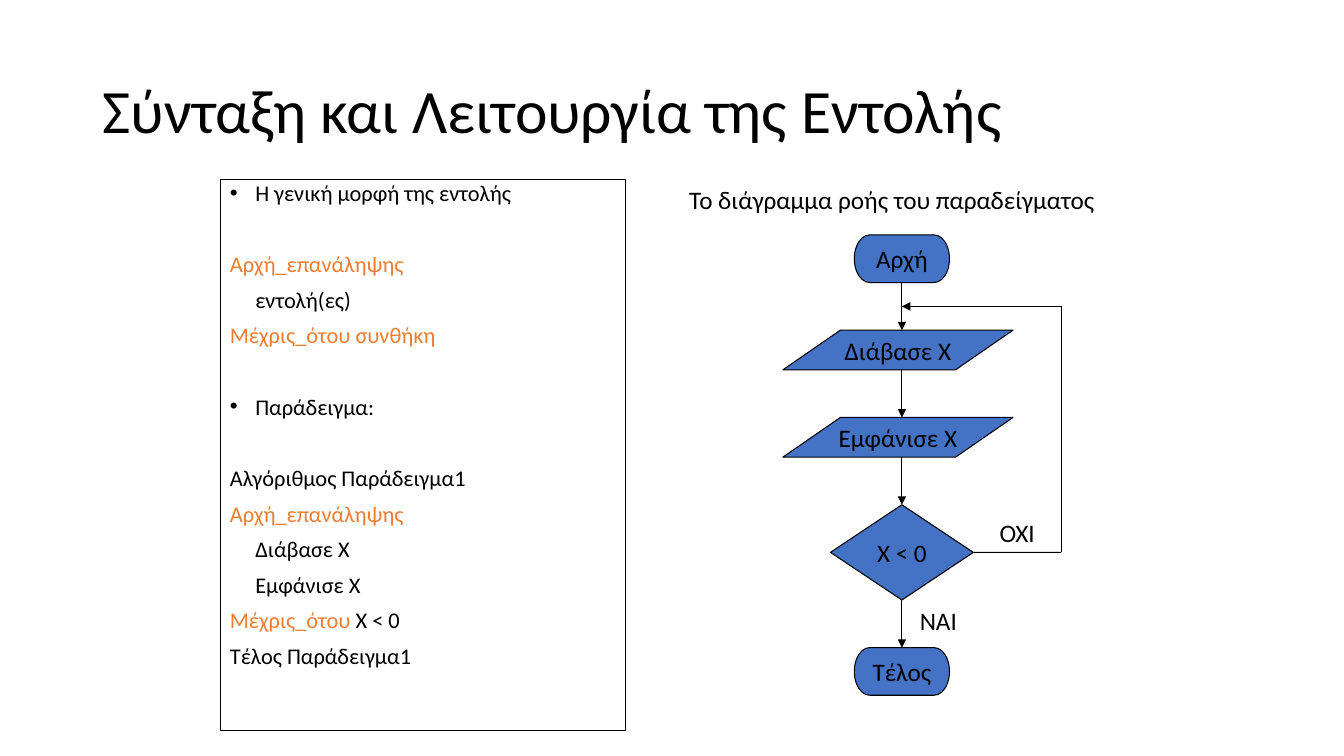
from lxml import etree
from pptx import Presentation
from pptx.dml.color import RGBColor
from pptx.enum import shapes, text
from pptx.oxml import ns
from pptx.util import Cm, Pt

BLACK = RGBColor(0x00, 0x00, 0x00)
BLUE = RGBColor(0x44, 0x72, 0xC4)
ORANGE = RGBColor(0xED, 0x7D, 0x31)
WHITE = RGBColor(0xFF, 0xFF, 0xFF)
FONT = "Calibri"

TITLE = "Σύνταξη και Λειτουργία της Εντολής"
CAPTION = "Το διάγραμμα ροής του παραδείγματος"

# kind, space before in points, (text, colour) parts
SYNTAX = [
    ("bullet", 0, [("Η γενική μορφή της εντολής", BLACK)]),
    ("code", 35.6, [("Αρχή_επανάληψης", ORANGE)]),
    ("inner", 10, [("εντολή(ες)", BLACK)]),
    ("code", 10, [("Μέχρις_ότου συνθήκη", ORANGE)]),
    ("bullet", 35.6, [("Παράδειγμα:", BLACK)]),
    ("code", 35.6, [("Αλγόριθμος Παράδειγμα1", BLACK)]),
    ("code", 10, [("Αρχή_επανάληψης", ORANGE)]),
    ("inner", 10, [("Διάβασε Χ", BLACK)]),
    ("inner", 10, [("Εμφάνισε Χ", BLACK)]),
    ("code", 10, [("Μέχρις_ότου ", ORANGE), ("Χ < 0", BLACK)]),
    ("code", 10, [("Τέλος Παράδειγμα1", BLACK)]),
]

STEPS = [
    ("Αρχή", "terminal"),
    ("Διάβασε Χ", "data"),
    ("Εμφάνισε Χ", "data"),
    ("Χ < 0", "decision"),
    ("Τέλος", "terminal"),
]
# preset, width, height, shift from the axis
STEP_FORMS = {
    "terminal": (shapes.MSO_SHAPE.FLOWCHART_TERMINATOR, 2.4, 1.2, 0),
    "data": (shapes.MSO_SHAPE.PARALLELOGRAM, 5.8, 1.0, -0.1),
    "decision": (shapes.MSO_SHAPE.FLOWCHART_DECISION, 3.6, 2.4, 0),
}
AXIS, FLOW_TOP, GAP, LOOP_X = 22.73, 5.92, 1.2, 26.74
LABELS = [
    (CAPTION, 17.12, 4.52, 11.6),
    ("ΝΑΙ", 22.93, 15.12, 2),
    ("OXI", 24.94, 12.92, 2),
]


def style(paragraph, size, colour=BLACK):
    for run in paragraph.runs:
        run.font.name = FONT
        run.font.size = Pt(size)
        run.font.color.rgb = colour


def place(item, left, top, width, height):
    item.left, item.top, item.width, item.height = map(Cm, (left, top, width, height))


def add_line(slide, start, end, arrow=True):
    line = slide.shapes.add_connector(
        shapes.MSO_CONNECTOR.STRAIGHT, *map(Cm, start + end))
    line.line.color.rgb = BLACK
    line.line.width = Pt(0.75)
    if arrow:
        etree.SubElement(line.line._get_or_add_ln(), ns.qn("a:tailEnd"), type="triangle")
    etree.SubElement(line._element.spPr, ns.qn("a:effectLst"))
    return line


def add_syntax(body):
    place(body, 5.54, 4.52, 10.21, 13.89)
    body.line.color.rgb = BLACK
    body.line.width = Pt(0.25)
    frame = body.text_frame
    frame.auto_size = text.MSO_AUTO_SIZE.NONE
    for number, (kind, before, parts) in enumerate(SYNTAX):
        paragraph = frame.add_paragraph() if number else frame.paragraphs[0]
        props = paragraph._p.get_or_add_pPr()
        props.set("marL", str(Cm(0.64)))
        props.set("indent", str(0 if kind == "inner" else -Cm(0.64)))
        if kind == "bullet":
            etree.SubElement(props, ns.qn("a:buFont"), typeface="Arial")
            etree.SubElement(props, ns.qn("a:buChar"), char="•")
        else:
            etree.SubElement(props, ns.qn("a:buNone"))
        paragraph.line_spacing = 0.8
        paragraph.space_before = Pt(before)
        for words, colour in parts:
            run = paragraph.add_run()
            run.text = words
            run.font.name = FONT
            run.font.size = Pt(16)
            run.font.color.rgb = colour


def add_step(slide, words, kind, top):
    preset, width, height, shift = STEP_FORMS[kind]
    step = slide.shapes.add_shape(
        preset, *map(Cm, (AXIS + shift - width / 2, top, width, height)))
    if kind == "data":
        step.adjustments[0] = 1.448
    step.shadow.inherit = False
    step.fill.solid()
    step.fill.fore_color.rgb = BLUE
    step.line.color.rgb = BLACK
    step.line.width = Pt(0.75)
    frame = step.text_frame
    frame.word_wrap = False
    frame.vertical_anchor = text.MSO_ANCHOR.MIDDLE
    frame.text = words
    frame.paragraphs[0].alignment = text.PP_ALIGN.CENTER
    style(frame.paragraphs[0], 18)
    return step


def add_flow(slide):
    top, previous, previous_kind = FLOW_TOP, None, None
    for words, kind in STEPS:
        step = add_step(slide, words, kind, top)
        if previous is not None:
            arrow = add_line(slide, (AXIS, top - GAP), (AXIS, top))
            if previous_kind != "data":
                arrow.begin_connect(previous, 2)
            if kind != "data":
                arrow.end_connect(step, 0)
        if kind == "decision":
            decision, middle = step, top + STEP_FORMS[kind][2] / 2
        top += STEP_FORMS[kind][2] + GAP
        previous, previous_kind = step, kind

    half_width = STEP_FORMS["decision"][1] / 2
    return_y = FLOW_TOP + STEP_FORMS["terminal"][2] + GAP / 2
    exit_line = add_line(slide, (AXIS + half_width, middle), (LOOP_X, middle), False)
    exit_line.begin_connect(decision, 3)
    add_line(slide, (LOOP_X, middle), (LOOP_X, return_y), False)
    add_line(slide, (LOOP_X, return_y), (AXIS, return_y))


def add_labels(slide):
    for words, left, top, width in LABELS:
        label = slide.shapes.add_textbox(*map(Cm, (left, top, width, 1.02)))
        label.text_frame.word_wrap = True
        label.text_frame.text = words
        style(label.text_frame.paragraphs[0], 18)


def main():
    deck = Presentation()
    deck.slide_width, deck.slide_height = Cm(33.87), Cm(19.05)
    slide = deck.slides.add_slide(deck.slide_layouts[1])
    slide.background.fill.solid()
    slide.background.fill.fore_color.rgb = WHITE

    title = slide.shapes.title
    place(title, 2.33, 1.02, 29.21, 3.68)
    title.text_frame.text = TITLE
    title.text_frame.auto_size = text.MSO_AUTO_SIZE.NONE
    title.text_frame.vertical_anchor = text.MSO_ANCHOR.MIDDLE
    heading = title.text_frame.paragraphs[0]
    heading.alignment = text.PP_ALIGN.LEFT
    heading.line_spacing = 0.9
    style(heading, 44)

    add_syntax(slide.placeholders[1])
    add_flow(slide)
    add_labels(slide)
    deck.save("out.pptx")


if __name__ == "__main__":
    main()
